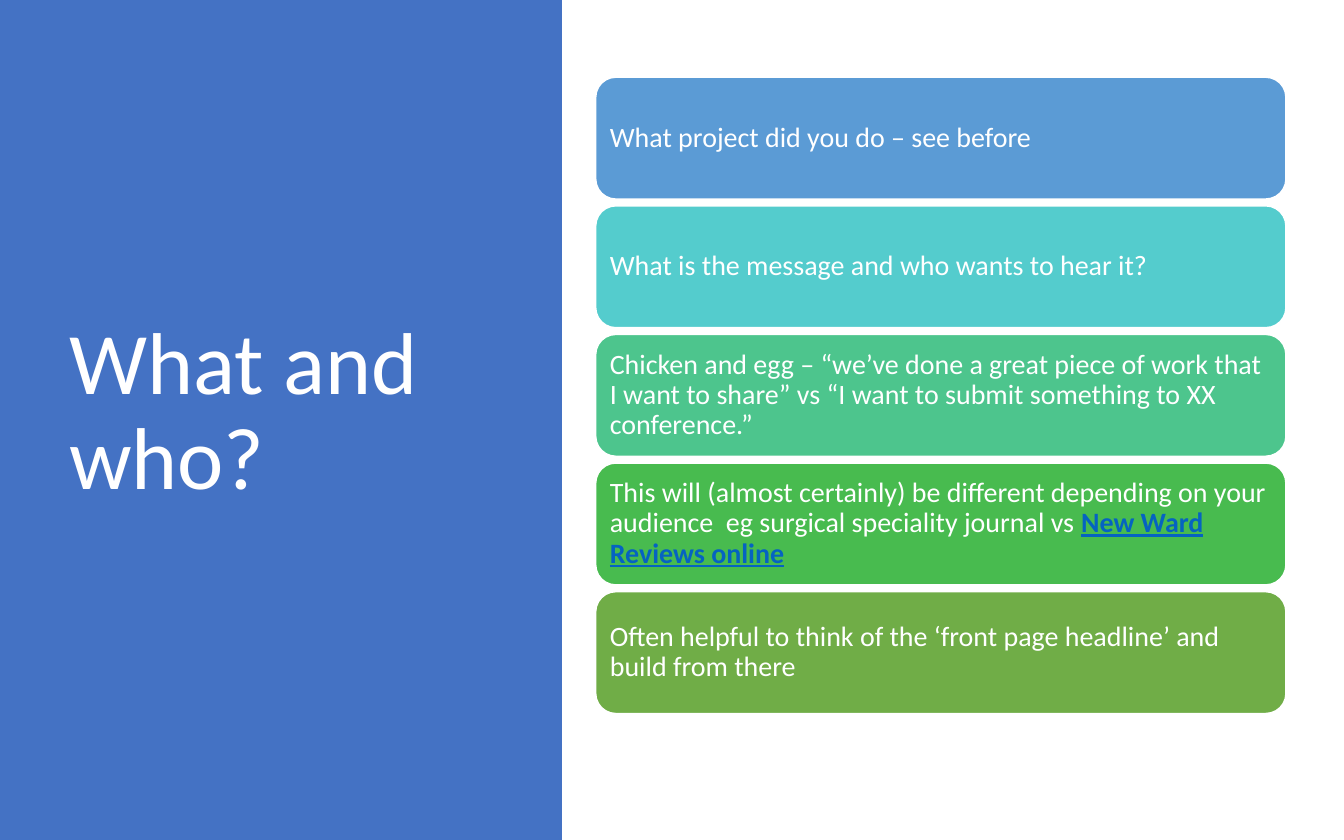
from dataclasses import dataclass

from pptx import Presentation
from pptx.dml.color import RGBColor
from pptx.enum import shapes, text
from pptx.util import Pt


@dataclass(frozen=True)
class Theme:
    font: str = "Calibri"
    title_size: float = 47
    card_size: float = 15
    light: str = "FFFFFF"
    panel: str = "4472C4"
    link: str = "0563C1"


@dataclass(frozen=True)
class Box:
    left: float
    top: float
    width: float
    height: float

    def lengths(self) -> tuple:
        return Pt(self.left), Pt(self.top), Pt(self.width), Pt(self.height)


@dataclass(frozen=True)
class Card:
    fill: str
    message: str
    link: str = ""


THEME = Theme()
PANEL = Box(0, 0, 301, 450)
TITLE = Box(31, 41, 225, 361)
FIRST_CARD = Box(319, 41.25, 370, 65.5)
CARD_STEP = 68.9

CARDS = [
    Card("5B9BD5", "What project did you do – see before"),
    Card("54CCCD", "What is the message and who wants to hear it?"),
    Card("4DC58D", "Chicken and egg – “we’ve done a great piece of work that "
                   "I want to share” vs “I want to submit something to XX conference.”"),
    Card("48BB4F", "This will (almost certainly) be different depending on your "
                   "audience  eg surgical speciality journal vs ",
         link="New Ward Reviews online"),
    Card("70AD47", "Often helpful to think of the ‘front page headline’ and "
                   "build from there"),
]


def add_words(frame, words: str, *, size: float, color: str = THEME.light,
              strong: bool = False) -> None:
    """Append one formatted run to the frame's first paragraph."""
    run = frame.paragraphs[0].add_run()
    run.text = words
    run.font.name = THEME.font
    run.font.size = Pt(size)
    run.font.color.rgb = RGBColor.from_string(color)
    run.font.bold = strong
    run.font.underline = strong


def set_frame(frame, side: float, end: float) -> None:
    """Wrapped, left-aligned, vertically centred text with the given insets."""
    frame.word_wrap = True
    frame.vertical_anchor = text.MSO_ANCHOR.MIDDLE
    frame.margin_left = frame.margin_right = Pt(side)
    frame.margin_top = frame.margin_bottom = Pt(end)
    frame.paragraphs[0].alignment = text.PP_ALIGN.LEFT
    frame.paragraphs[0].line_spacing = 0.9


def add_block(slide, kind, box: Box, fill: str):
    block = slide.shapes.add_shape(kind, *box.lengths())
    block.shadow.inherit = False
    block.fill.solid()
    block.fill.fore_color.rgb = RGBColor.from_string(fill)
    block.line.fill.background()
    return block


def add_card(slide, card: Card, box: Box) -> None:
    block = add_block(slide, shapes.MSO_SHAPE.ROUNDED_RECTANGLE, box, card.fill)
    block.line.color.rgb = RGBColor.from_string(THEME.light)
    block.line.width = Pt(1)
    set_frame(block.text_frame, side=4.5, end=4.5)
    add_words(block.text_frame, card.message, size=THEME.card_size)
    if card.link:
        add_words(block.text_frame, card.link, size=THEME.card_size,
                  color=THEME.link, strong=True)


def main() -> None:
    deck = Presentation()
    deck.slide_width, deck.slide_height = Pt(720), Pt(450)
    slide = deck.slides.add_slide(deck.slide_layouts[6])

    # Title panel
    add_block(slide, shapes.MSO_SHAPE.RECTANGLE, PANEL, THEME.panel)
    title = slide.shapes.add_textbox(*TITLE.lengths()).text_frame
    set_frame(title, side=6, end=3)
    add_words(title, "What and who?", size=THEME.title_size)

    # Stack of message cards
    for row, card in enumerate(CARDS):
        top = FIRST_CARD.top + row * CARD_STEP
        add_card(slide, card,
                 Box(FIRST_CARD.left, top, FIRST_CARD.width, FIRST_CARD.height))

    deck.save("out.pptx")


if __name__ == "__main__":
    main()
